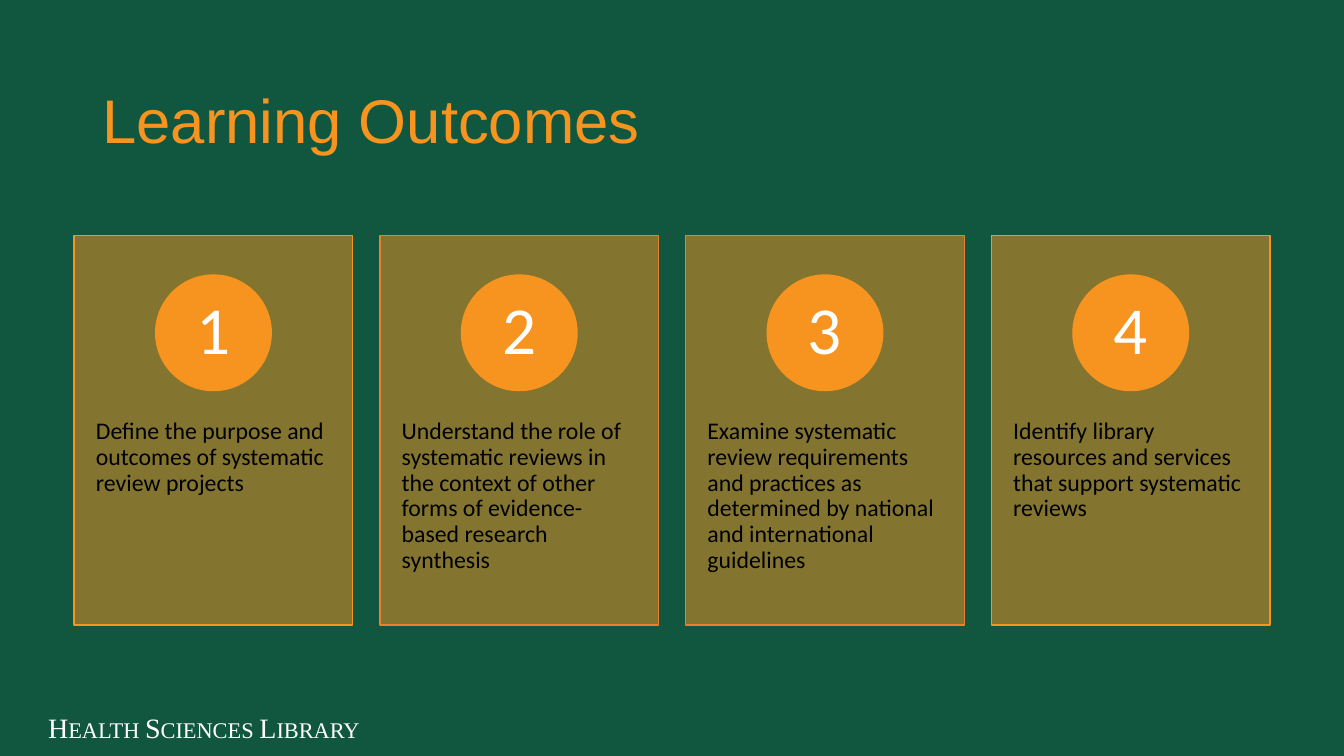
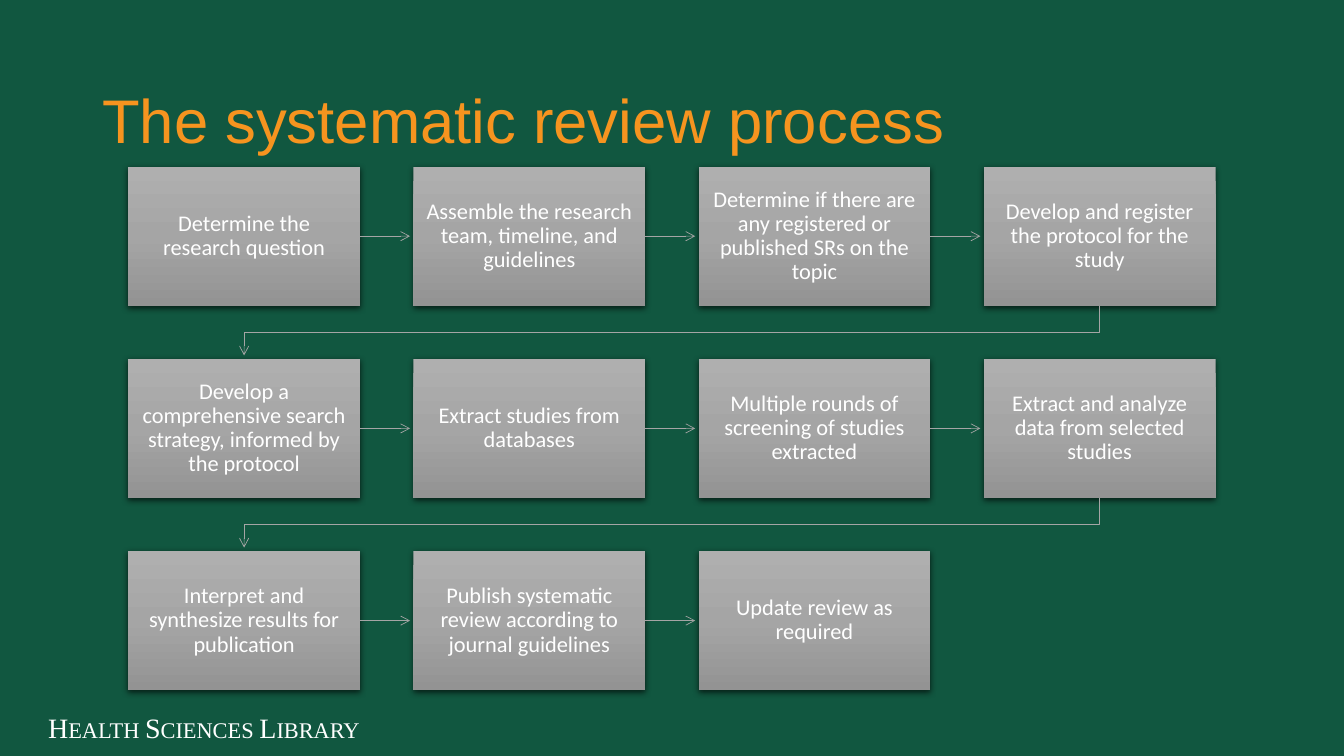
from dataclasses import dataclass

import pptx
import pptx.dml.color
import pptx.enum.shapes
import pptx.enum.text
import pptx.oxml
import pptx.oxml.ns
import pptx.util

Pt = pptx.util.Pt
RGB = pptx.dml.color.RGBColor.from_string
SHAPE = pptx.enum.shapes.MSO_SHAPE
ALIGN = pptx.enum.text.PP_ALIGN
ANCHOR = pptx.enum.text.MSO_ANCHOR
NAMESPACE = pptx.oxml.ns.nsdecls("a")


@dataclass(frozen=True)
class Theme:
    background: str = "115740"
    accent: str = "F6941F"
    accent_dark: str = "ED7D31"
    white: str = "FFFFFF"
    black: str = "000000"
    gray: str = "A5A5A5"
    gray_light: str = "AFAFAF"
    gray_dark: str = "939393"
    title_font: str = "Arial"
    body_font: str = "Calibri"
    footer_font: str = "Times New Roman"
    title_size: int = 44
    number_size: int = 48
    card_size: int = 17
    step_size: int = 16
    footer_size: int = 20


theme = Theme()


def set_text(shape, text, *, size, color, font=theme.body_font, align=ALIGN.LEFT,
             anchor=ANCHOR.MIDDLE, margins=(7.2, 3.6, 7.2, 3.6), spacing=0.9,
             small_caps=False):
    frame = shape.text_frame
    frame.word_wrap = True
    frame.vertical_anchor = anchor
    (frame.margin_left, frame.margin_top,
     frame.margin_right, frame.margin_bottom) = map(Pt, margins)
    paragraph = frame.paragraphs[0]
    paragraph.alignment = align
    paragraph.line_spacing = spacing
    run = paragraph.add_run()
    run.text = text
    run.font.name = font
    run.font.size = Pt(size)
    run.font.color.rgb = RGB(color)
    if small_caps:
        run._r.get_or_add_rPr().set("cap", "small")


def style_arrow(shape):
    shape.line.color.rgb = RGB(theme.gray)
    shape.line.width = Pt(0.5)
    properties = shape.element.spPr
    properties.ln.append(pptx.oxml.parse_xml(f'<a:tailEnd {NAMESPACE} type="arrow"/>'))
    properties.append(pptx.oxml.parse_xml(f"<a:effectLst {NAMESPACE}/>"))


presentation = pptx.Presentation()
presentation.slide_width = Pt(960)
presentation.slide_height = Pt(540)

# Shared background, title and footer
background = presentation.slide_master.background.fill
background.solid()
background.fore_color.rgb = RGB(theme.background)

slides = []
for title in ("Learning Outcomes", "The systematic review process"):
    slide = presentation.slides.add_slide(presentation.slide_layouts[6])
    title_box = slide.shapes.add_textbox(Pt(66), Pt(36), Pt(828), Pt(104.4))
    set_text(title_box, title, size=theme.title_size, color=theme.accent,
             font=theme.title_font)
    footer = slide.shapes.add_textbox(Pt(13), Pt(504), Pt(251), Pt(31.5))
    set_text(footer, "Health Sciences Library", size=theme.footer_size,
             color=theme.white, font=theme.footer_font, align=ALIGN.RIGHT,
             anchor=ANCHOR.TOP, spacing=1.0, small_caps=True)
    slides.append(slide)
outcomes_slide, process_slide = slides

# Outcome cards with numbered circles
outcomes = [
    ("Define the purpose and outcomes of systematic review projects", theme.accent),
    ("Understand the role of systematic reviews in the context of other forms of "
     "evidence-based research synthesis", theme.accent_dark),
    ("Examine systematic review requirements and practices as determined by "
     "national and international guidelines", theme.accent_dark),
    ("Identify library resources and services that support systematic reviews",
     theme.accent),
]
card_left, card_top, card_width, card_height, card_pitch = 53, 168.4, 199, 278, 218.4
circle_size = 83.5

for index, (outcome, border) in enumerate(outcomes):
    left = card_left + index * card_pitch
    card = outcomes_slide.shapes.add_shape(
        SHAPE.RECTANGLE, Pt(left), Pt(card_top), Pt(card_width), Pt(card_height))
    card.shadow.inherit = False
    card.fill.solid()
    card.fill.fore_color.rgb = RGB(theme.accent)
    fill_color = card.element.spPr.find(".//" + pptx.oxml.ns.qn("a:srgbClr"))
    fill_color.append(pptx.oxml.parse_xml(f'<a:alpha {NAMESPACE} val="50000"/>'))
    card.line.color.rgb = RGB(border)
    card.line.width = Pt(1)
    set_text(card, outcome, size=theme.card_size, color=theme.black,
             anchor=ANCHOR.TOP, margins=(15.5, 131, 15.5, 26))

    circle = outcomes_slide.shapes.add_shape(
        SHAPE.OVAL, Pt(left + (card_width - circle_size) / 2), Pt(196),
        Pt(circle_size), Pt(circle_size))
    circle.shadow.inherit = False
    circle.fill.solid()
    circle.fill.fore_color.rgb = RGB(theme.accent)
    circle.line.fill.background()
    set_text(circle, str(index + 1), size=theme.number_size, color=theme.white,
             align=ALIGN.CENTER, margins=(0, 0, 0, 0))

# Process steps, four to a row
steps = [
    "Determine the research question",
    "Assemble the research team, timeline, and guidelines",
    "Determine if there are any registered or published SRs on the topic",
    "Develop and register the protocol for the study",
    "Develop a comprehensive search strategy, informed by the protocol",
    "Extract studies from databases",
    "Multiple rounds of screening of studies extracted",
    "Extract and analyze data from selected studies",
    "Interpret and synthesize results for publication",
    "Publish systematic review according to journal guidelines",
    "Update review as required",
]
columns = 4
step_left, step_top, step_width, step_height = 91.6, 119, 165.6, 99.4
step_pitch, row_pitch = 203.7, 137.3
arrow_gap = 2.4
gradient_xml = f"""<a:gradFill {NAMESPACE} rotWithShape="1"><a:gsLst>
<a:gs pos="0"><a:srgbClr val="{theme.gray_light}"/></a:gs>
<a:gs pos="50000"><a:srgbClr val="{theme.gray}"/></a:gs>
<a:gs pos="100000"><a:srgbClr val="{theme.gray_dark}"/></a:gs>
</a:gsLst><a:lin ang="5400000" scaled="0"/></a:gradFill>"""
shadow_xml = f"""<a:effectLst {NAMESPACE}>
<a:outerShdw blurRad="{Pt(4.5)}" dist="{Pt(1.5)}" dir="5400000" algn="ctr" rotWithShape="0">
<a:srgbClr val="{theme.black}"><a:alpha val="63000"/></a:srgbClr>
</a:outerShdw></a:effectLst>"""

for index, step in enumerate(steps):
    row, column = divmod(index, columns)
    left = step_left + column * step_pitch
    top = step_top + row * row_pitch
    box = process_slide.shapes.add_shape(
        SHAPE.RECTANGLE, Pt(left), Pt(top), Pt(step_width), Pt(step_height))
    box.line.fill.background()
    box_properties = box.element.spPr
    box_properties.ln.addprevious(pptx.oxml.parse_xml(gradient_xml))
    box_properties.append(pptx.oxml.parse_xml(shadow_xml))
    set_text(box, step, size=theme.step_size, color=theme.white,
             align=ALIGN.CENTER, margins=(8, 8.5, 8, 8.5))

    # Arrow to the next step: straight in a row, bent between rows
    if index == len(steps) - 1:
        continue
    if column < columns - 1:
        middle = top + step_height / 2
        arrow = process_slide.shapes.add_connector(
            pptx.enum.shapes.MSO_CONNECTOR.STRAIGHT,
            Pt(left + step_width), Pt(middle),
            Pt(left + step_pitch - arrow_gap), Pt(middle))
    else:
        start, end = left + step_width / 2, step_left + step_width / 2
        bottom, next_top = top + step_height, top + row_pitch
        turn = (bottom + next_top) / 2
        outline = process_slide.shapes.build_freeform(Pt(start), Pt(bottom))
        outline.add_line_segments(
            [(Pt(start), Pt(turn)), (Pt(end), Pt(turn)),
             (Pt(end), Pt(next_top - arrow_gap))], close=False)
        arrow = outline.convert_to_shape()
        arrow.fill.background()
    style_arrow(arrow)

presentation.save("out.pptx")
